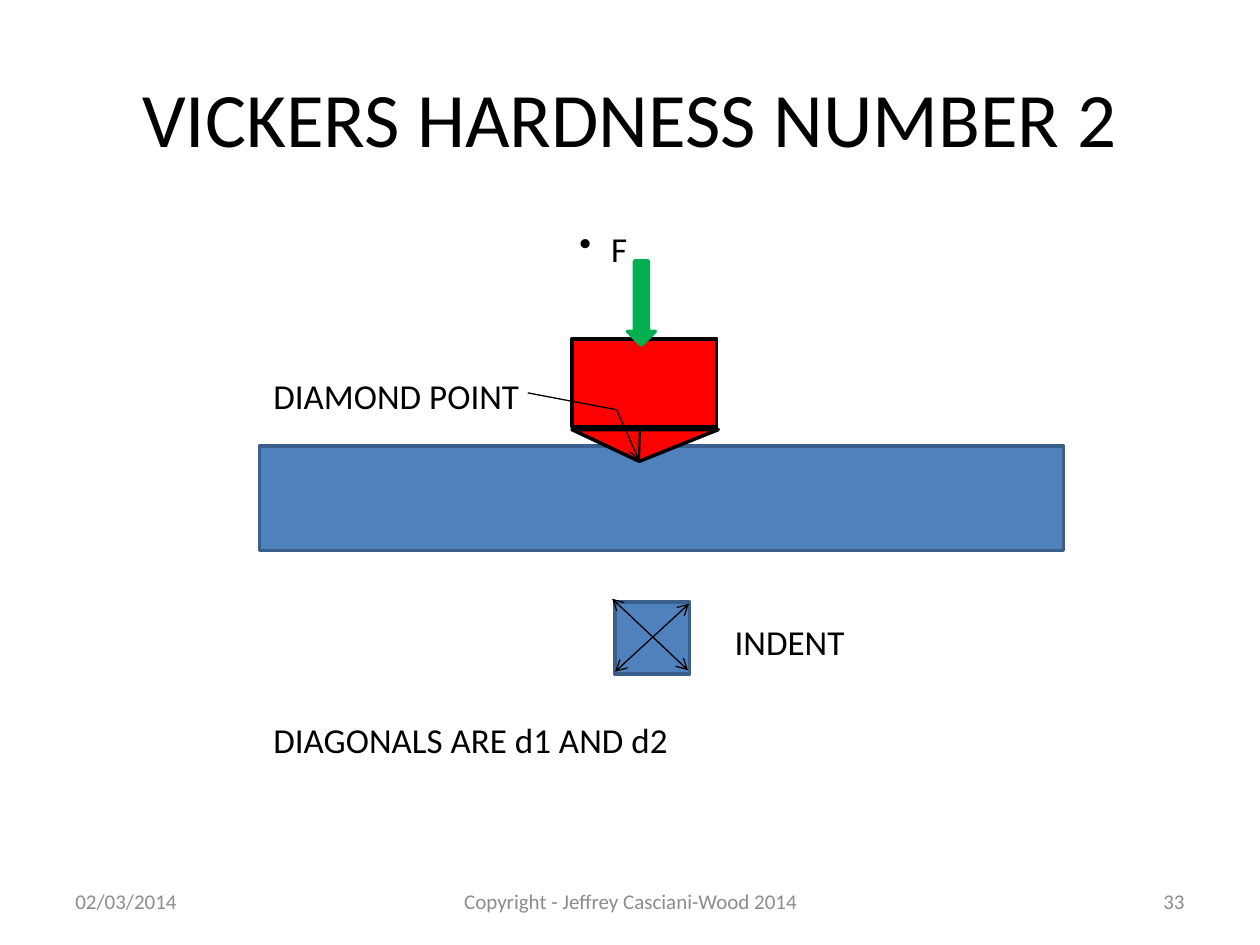
from dataclasses import dataclass

from lxml import etree
from pptx import Presentation
from pptx.dml.color import RGBColor
from pptx.enum.shapes import MSO_CONNECTOR, MSO_SHAPE
from pptx.enum.text import MSO_ANCHOR, PP_ALIGN
from pptx.oxml.ns import qn
from pptx.util import Cm, Pt

STRAIGHT = MSO_CONNECTOR.STRAIGHT
RECT, TRIANGLE, DOWN_ARROW = MSO_SHAPE.RECTANGLE, MSO_SHAPE.ISOSCELES_TRIANGLE, MSO_SHAPE.DOWN_ARROW
LEFT, CENTER, RIGHT = PP_ALIGN.LEFT, PP_ALIGN.CENTER, PP_ALIGN.RIGHT
MIDDLE = MSO_ANCHOR.MIDDLE

FONT = "Calibri"
COLORS = {
    "black": "000000",
    "grey": "8C8C8C",
    "metal": "4F81BD",
    "metal edge": "3A5F8C",
    "indenter": "FF0000",
    "force": "00B050",
}


@dataclass
class Block:
    kind: int
    left: float
    top: float
    width: float
    height: float
    fill: str
    edge: str
    rotation: float = 0
    adjustment: float | None = None


@dataclass
class Line:
    start: tuple[float, float]
    end: tuple[float, float]
    width: float = 0.75
    head: bool = False
    tail: bool = False


@dataclass
class Label:
    text: str
    left: float
    top: float
    width: float
    height: float = 1.12
    size: int = 20
    color: str = "black"
    align: int = LEFT
    bullet: bool = False


BLOCKS = [
    Block(RECT, 5.23, 8.99, 16.21, 2.11, "metal", "metal edge"),
    Block(TRIANGLE, 11.53, 8.66, 2.95, 0.64, "indenter", "black", 180, 0.54),
    Block(RECT, 11.53, 6.83, 2.92, 1.78, "indenter", "black"),
    Block(DOWN_ARROW, 12.65, 5.26, 0.56, 1.7, "force", "force"),
    Block(RECT, 12.4, 12.14, 1.5, 1.45, "metal", "metal edge"),
]

POINT = (12.88, 9.27)
LEADER_BEND = (12.43, 8.26)
LINES = [
    Line((10.64, 7.92), LEADER_BEND),
    Line(LEADER_BEND, POINT, tail=True),
    Line((12.4, 13.54), (13.89, 12.17), head=True, tail=True),
    Line((12.34, 12.07), (13.87, 13.51), head=True, tail=True),
    Line((12.9, 8.64), POINT, 1.25),
]

FOOTER = dict(top=17.65, height=1.02, size=12, color="grey")
LABELS = [
    Label("F", 11.43, 4.44, 2, bullet=True),
    Label("DIAMOND POINT", 5.26, 7.42, 6),
    Label("INDENT", 14.56, 12.37, 3.5),
    Label("DIAGONALS ARE d1 AND d2", 5.26, 14.35, 9),
    Label("02/03/2014", left=1.27, width=5.92, **FOOTER),
    Label("Copyright - Jeffrey Casciani-Wood 2014", left=8.69, width=8.05, align=CENTER, **FOOTER),
    Label("33", left=18.21, width=5.92, align=RIGHT, **FOOTER),
]


def rgb(name: str) -> RGBColor:
    return RGBColor.from_string(COLORS[name])


def set_text(sp, text: str, size: int, color: str, align: int):
    tf = sp.text_frame
    tf.word_wrap = True
    tf.vertical_anchor = MIDDLE
    p = tf.paragraphs[0]
    p.text = text
    p.alignment = align
    p.font.name = FONT
    p.font.size = Pt(size)
    p.font.color.rgb = rgb(color)
    return p


def add_block(slide, block: Block) -> None:
    sp = slide.shapes.add_shape(
        block.kind, Cm(block.left), Cm(block.top), Cm(block.width), Cm(block.height))
    sp.shadow.inherit = False
    sp.rotation = block.rotation
    if block.adjustment is not None:
        sp.adjustments[0] = block.adjustment
    sp.fill.solid()
    sp.fill.fore_color.rgb = rgb(block.fill)
    sp.line.color.rgb = rgb(block.edge)
    sp.line.width = Pt(2)


def add_line(slide, line: Line) -> None:
    cxn = slide.shapes.add_connector(STRAIGHT, *map(Cm, line.start + line.end))
    cxn.line.color.rgb = rgb("black")
    cxn.line.width = Pt(line.width)
    ln = cxn.line._get_or_add_ln()
    for tag, shown in (("a:headEnd", line.head), ("a:tailEnd", line.tail)):
        if shown:
            etree.SubElement(ln, qn(tag), type="arrow")
    etree.SubElement(cxn._element.spPr, qn("a:effectLst"))


def add_label(slide, label: Label) -> None:
    sp = slide.shapes.add_textbox(
        Cm(label.left), Cm(label.top), Cm(label.width), Cm(label.height))
    p = set_text(sp, label.text, label.size, label.color, label.align)
    if label.bullet:
        indent = Cm(0.64)
        pPr = p._p.get_or_add_pPr()
        pPr.set("marL", str(indent))
        pPr.set("indent", str(-indent))
        bullet = etree.Element(qn("a:buChar"), char="•")
        pPr.insert(0, bullet)


def main() -> None:
    prs = Presentation()
    prs.slide_width, prs.slide_height = Cm(25.4), Cm(19.05)
    slide = prs.slides.add_slide(prs.slide_layouts[5])

    title = slide.shapes.title
    title.left, title.top, title.width, title.height = map(Cm, (1.27, 0.76, 22.86, 3.18))
    set_text(title, "VICKERS HARDNESS NUMBER 2", 44, "black", CENTER)

    for block in BLOCKS:
        add_block(slide, block)
    for line in LINES:
        add_line(slide, line)
    for label in LABELS:
        add_label(slide, label)
    prs.save("out.pptx")


if __name__ == "__main__":
    main()
